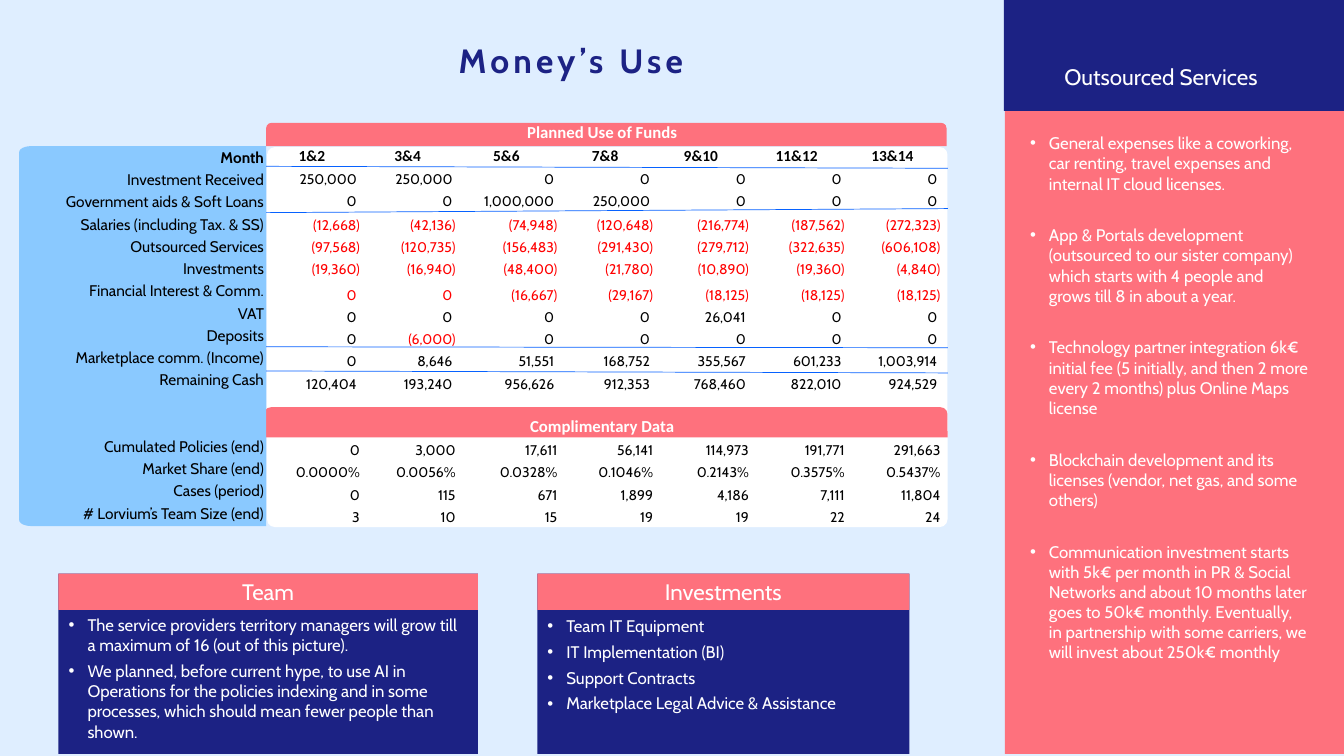
import math
import pptx
import pptx.dml.color
import pptx.enum.shapes
import pptx.enum.text
import pptx.oxml.ns
import pptx.util
from lxml import etree

Pt = pptx.util.Pt
qn = pptx.oxml.ns.qn
ALIGN = pptx.enum.text.PP_ALIGN
ANCHOR = pptx.enum.text.MSO_ANCHOR
SHAPE = pptx.enum.shapes.MSO_SHAPE

COLORS = {"sky": "DFEEFF", "label": "8AC9FF", "coral": "FE717D", "navy": "1C2284",
          "rule": "0762FF", "red": "FF0000", "black": "000000", "white": "FFFFFF"}
NO_GRID = "{2D5ABB26-0587-4C30-8999-92F81FD0307C}"
ROW_H = 15.9
MONTHS = ["1&2", "3&4", "5&6", "7&8", "9&10", "11&12", "13&14"]
FINANCIAL = "Financial Interest & Comm."
FUNDS = {
    "Investment Received": [250000, 250000, 0, 0, 0, 0, 0],
    "Government aids & Soft Loans": [0, 0, 1000000, 250000, 0, 0, 0],
    "Salaries (including Tax. & SS)": [-12668, -42136, -74948, -120648, -216774, -187562, -272323],
    "Outsourced Services": [-97568, -120735, -156483, -291430, -279712, -322635, -606108],
    "Investments": [-19360, -16940, -48400, -21780, -10890, -19360, -4840],
    FINANCIAL: [0, 0, -16667, -29167, -18125, -18125, -18125],
    "VAT": [0, 0, 0, 0, 26041, 0, 0],
    "Deposits": [0, -6000, 0, 0, 0, 0, 0],
    "Marketplace comm. (Income)": [0, 8646, 51551, 168752, 355567, 601233, 1003914],
    "Remaining Cash": [120404, 193240, 956626, 912353, 768460, 822010, 924529],
}
EXTRAS = {
    "Cumulated Policies (end)": ["0", "3,000", "17,611", "56,141", "114,973", "191,771", "291,663"],
    "Market Share (end)": ["0.0000%", "0.0056%", "0.0328%", "0.1046%", "0.2143%", "0.3575%", "0.5437%"],
    "Cases (period)": ["0", "115", "671", "1,899", "4,186", "7,111", "11,804"],
    "# Lorvium’s Team Size (end)": ["3", "10", "15", "19", "19", "22", "24"],
}
TEAM = [
    "The service providers territory managers will grow till a maximum of 16 (out of this picture).",
    "We planned, before current hype, to use AI in Operations for the policies indexing and in some "
    "processes, which should mean fewer people than shown.",
]
INVESTMENTS = ["Team IT Equipment", "IT Implementation (BI)", "Support Contracts",
               "Marketplace Legal Advice & Assistance"]
SERVICES = [
    "General expenses like a coworking, car renting, travel expenses and internal IT cloud licenses.",
    "App & Portals development (outsourced to our sister company) which starts with 4 people and "
    "grows till 8 in about a year.",
    "Technology partner integration 6k€ initial fee (5 initially, and then 2 more every 2 months) "
    "plus Online Maps license",
    "Blockchain development and its licenses (vendor, net gas, and some others)",
    "Communication investment starts with 5k€ per month in PR & Social Networks and about 10 months "
    "later goes to 50k€ monthly. Eventually, in partnership with some carriers, we will invest about "
    "250k€ monthly",
]


def rgb(name):
    return pptx.dml.color.RGBColor.from_string(COLORS[name])


def style(p, size, color, bold=False, align=ALIGN.LEFT, font="Cabin"):
    p.alignment = align
    p.font.name, p.font.size, p.font.bold = font, Pt(size), bold
    p.font.color.rgb = rgb(color)


def paint(sp, color):
    sp.fill.solid()
    sp.fill.fore_color.rgb = rgb(color)
    sp.line.fill.background()
    sp.shadow.inherit = False


def add_box(s, box, color, kind=SHAPE.RECTANGLE, corner=None):
    sp = s.shapes.add_shape(kind, *map(Pt, box))
    paint(sp, color)
    if corner is not None:
        sp.adjustments[0] = corner
    return sp


def add_label_panel(s, left, top, width, height, rx, ry):
    bottom = top + height
    angles = [math.radians(a) for a in range(0, 91, 15)]
    lower = [(left + rx - rx * math.sin(a), bottom - ry + ry * math.cos(a)) for a in angles]
    upper = [(left + rx - rx * math.cos(a), top + ry - ry * math.sin(a)) for a in angles]
    fb = s.shapes.build_freeform(Pt(left + width), Pt(top))
    fb.add_line_segments([(Pt(x), Pt(y)) for x, y in [(left + width, bottom)] + lower + upper])
    paint(fb.convert_to_shape(), "label")


def add_rule(s, x1, y1, x2, y2):
    line = s.shapes.add_connector(pptx.enum.shapes.MSO_CONNECTOR.STRAIGHT, *map(Pt, (x1, y1, x2, y2)))
    line.line.color.rgb = rgb("rule")
    line.line.width = Pt(0.5)
    etree.SubElement(line.element.find(qn("p:spPr")), qn("a:effectLst"))


def place_text(sp, box, lines):
    sp.left, sp.top, sp.width, sp.height = map(Pt, box)
    tf = sp.text_frame
    tf.text = "\n".join(lines)
    tf.auto_size = pptx.enum.text.MSO_AUTO_SIZE.NONE
    tf.vertical_anchor = ANCHOR.TOP
    tf.word_wrap = True
    for p in tf.paragraphs:
        p.space_before = Pt(0)
    parent = sp.element.getparent()
    parent.append(sp.element)
    return tf


def place_heading(sp, box, text, size, color, bold=False):
    tf = place_text(sp, box, [text])
    p = tf.paragraphs[0]
    style(p, size, color, bold)
    pPr = p._p.get_or_add_pPr()
    pPr.set("marL", "0")
    pPr.set("indent", "0")
    return tf


def place_list(sp, box, items, gap=4):
    for p in place_text(sp, box, items).paragraphs:
        style(p, 12, "white")
        p.space_after = Pt(gap)
        pPr = p._p.get_or_add_pPr()
        pPr.set("marL", str(Pt(13.5)))
        pPr.set("indent", str(-Pt(13.5)))
        bullet = etree.Element(qn("a:buChar"), char="•")
        pPr.find(qn("a:defRPr")).addprevious(bullet)


def add_card(s, left, width, heading):
    add_box(s, (left, 409.7, width, 128.9), "navy")
    sp = add_box(s, (left, 409.7, width, 25.9), "coral")
    sp.text_frame.text = heading
    style(sp.text_frame.paragraphs[0], 16, "white", align=ALIGN.CENTER)


def add_grid(s, left, top, widths, heights):
    frame = s.shapes.add_table(len(heights), len(widths), Pt(left), Pt(top), Pt(sum(widths)), Pt(sum(heights)))
    table = frame.table
    table.first_row = table.horz_banding = False
    next(frame.element.iter(qn("a:tableStyleId"))).text = NO_GRID
    for column, width in zip(table.columns, widths):
        column.width = Pt(width)
    for row, height in zip(table.rows, heights):
        row.height = Pt(height)
    for cell in table.iter_cells():
        cell.fill.background()
        cell.margin_left = cell.margin_right = cell.margin_top = cell.margin_bottom = 0
        cell.vertical_anchor = ANCHOR.BOTTOM
        etree.SubElement(cell.text_frame.paragraphs[0]._p, qn("a:endParaRPr"), sz="1000")
    return table


def fill_cell(cell, text, size, color="black", **kwargs):
    p = cell.text_frame.paragraphs[0]
    p.add_run().text = text
    style(p, size, color, **kwargs)


def add_values_table(s):
    heights = [ROW_H] * 18
    heights[4], heights[7] = 17.3, 18
    table = add_grid(s, 188.6, 86.4, [68.4] * 2 + [72.7] + [68.4] * 4, heights)
    for row, heading in ((0, "Planned Use of Funds"), (13, "Complimentary Data")):
        table.cell(row, 0).merge(table.cell(row, 6))
        fill_cell(table.cell(row, 0), heading, 12, "white", bold=True, align=ALIGN.CENTER, font="Calibri")
    for col, month in enumerate(MONTHS):
        fill_cell(table.cell(1, col), month, 11, bold=True, align=ALIGN.CENTER, font="Calibri")
    for row, (name, amounts) in enumerate(FUNDS.items(), 2):
        for col, amount in enumerate(amounts):
            text = f"({-amount:,})" if amount < 0 else f"{amount:,} "
            color = "red" if amount < 0 or name == FINANCIAL else "black"
            fill_cell(table.cell(row, col), text, 10, color, align=ALIGN.RIGHT)
    for row, values in enumerate(EXTRAS.values(), 14):
        for col, value in enumerate(values):
            fill_cell(table.cell(row, col), value, 10, align=ALIGN.RIGHT)


def add_label_table(s):
    labels = ["Month", *FUNDS, "", "", *EXTRAS]
    table = add_grid(s, 11.5, 103.7, [177.1], [ROW_H] * len(labels))
    for row, label in enumerate(labels):
        if label:
            fill_cell(table.cell(row, 0), label, 11, bold=row == 0, align=ALIGN.RIGHT)


def main():
    prs = pptx.Presentation()
    prs.slide_width, prs.slide_height = Pt(960), Pt(540)
    s = prs.slides.add_slide(prs.slide_layouts[4])
    s.background.fill.solid()
    s.background.fill.fore_color.rgb = rgb("sky")
    slots = {sp.placeholder_format.idx: sp for sp in s.placeholders}

    add_box(s, (190.8, 105.1, 486, 271.4), "white", SHAPE.ROUNDED_RECTANGLE, 0.02)
    add_box(s, (188.6, 290.9, 488.2, 21.6), "coral", SHAPE.ROUND_2_SAME_RECTANGLE, 0.23)
    add_box(s, (190.1, 87.8, 486, 16.6), "coral", SHAPE.ROUND_2_SAME_RECTANGLE, 0.23)
    add_values_table(s)
    add_label_panel(s, 13.7, 104.4, 176.4, 271.4, 8.6, 4.3)
    add_label_table(s)
    for y1, y2 in ((118.8, 120.2), (151.9, 149), (247.7, 248.4), (265, 266.4)):
        add_rule(s, 190.1, y1, 677, y2)

    title = place_heading(slots[0], (320.4, 25.2, 196.6, 36), "Money’s Use", 24, "navy", True)
    title.word_wrap = False
    title.paragraphs[0].runs[0]._r.get_or_add_rPr().set("spc", "300")

    add_card(s, 41.8, 299.5, "Team")
    place_list(slots[2], (41.8, 435.6, 299.5, 103), TEAM)
    add_card(s, 383.8, 265.7, "Investments")
    place_list(slots[4], (383.8, 436.3, 265.7, 102), INVESTMENTS)

    add_box(s, (717.8, 29.5, 242.2, 509), "coral")
    add_box(s, (717.1, 0, 242.9, 79.2), "navy")
    place_heading(slots[1], (753.1, 41.8, 170.6, 26.6), "Outsourced Services", 16, "white")
    place_list(slots[3], (728.6, 91.4, 213.8, 445), SERVICES, 22.5)
    prs.save("out.pptx")


if __name__ == "__main__":
    main()
